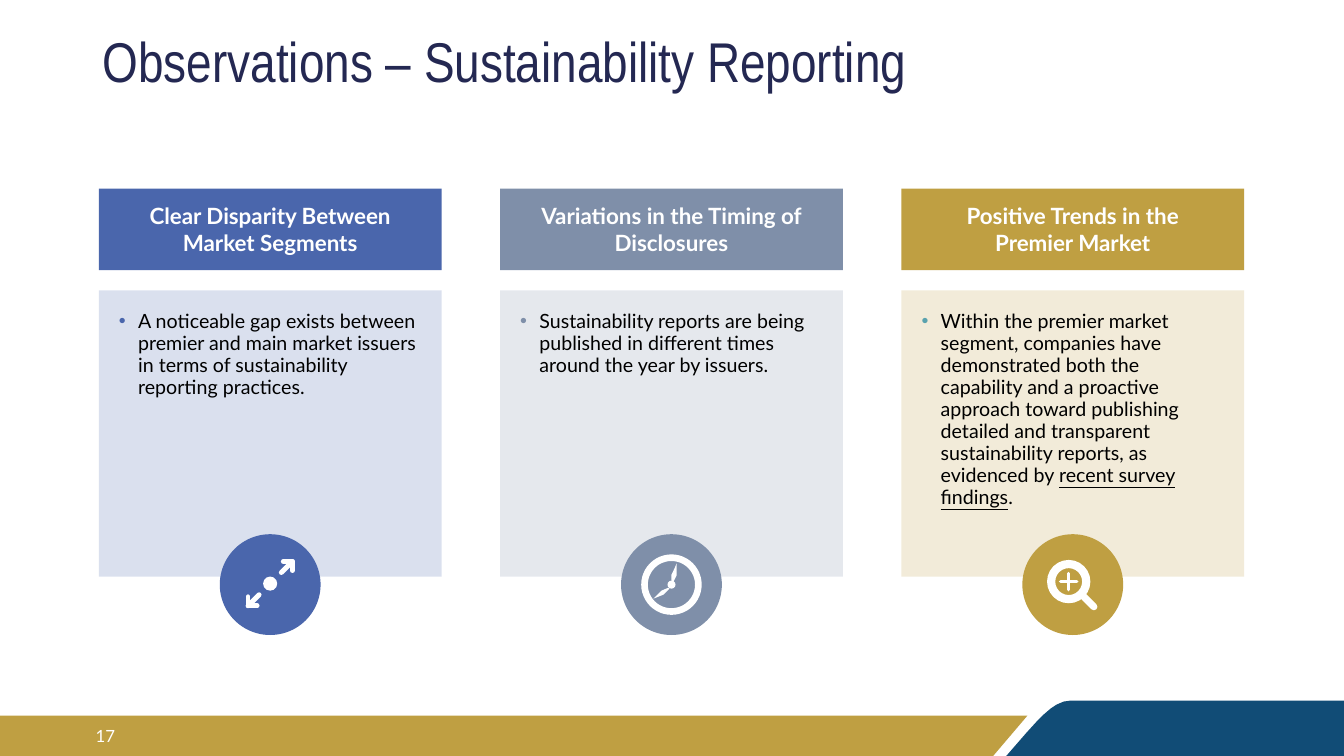
from collections import namedtuple

from lxml import etree
from pptx import Presentation
from pptx import util as u
from pptx.dml.color import RGBColor
from pptx.enum import shapes, text
from pptx.oxml.ns import qn

SLIDE_W, SLIDE_H = 13.33, 7.5
NAVY = RGBColor(0x24, 0x28, 0x52)
BLUE = RGBColor(0x4A, 0x66, 0xAC)
SLATE = RGBColor(0x7F, 0x8F, 0xA9)
GOLD = RGBColor(0xBF, 0x9F, 0x42)
TEAL = RGBColor(0x5A, 0xA2, 0xAE)
DEEP_BLUE = RGBColor(0x11, 0x4C, 0x76)
WHITE = RGBColor(0xFF, 0xFF, 0xFF)
BLACK = RGBColor(0, 0, 0)

PRESET = shapes.MSO_SHAPE
ALIGN = text.PP_ALIGN
ANCHOR = text.MSO_ANCHOR
Box = namedtuple("Box", "left top width height")


def inches(values):
    return [u.Inches(value) for value in values]


def centred(x, y, size):
    return Box(x - size / 2, y - size / 2, size, size)


def paint(shape, color, alpha=None):
    shape.shadow.inherit = False
    shape.line.fill.background()
    shape.fill.solid()
    shape.fill.fore_color.rgb = color
    if alpha:
        solid = shape.fill._xPr.find(qn("a:solidFill"))
        etree.SubElement(solid[0], qn("a:alpha"), val=str(alpha * 1000))
    return shape


def add_preset(slide, kind, box, color, alpha=None):
    return paint(slide.shapes.add_shape(kind, *inches(box)), color, alpha)


def trace(slide, points, close):
    start, *rest = [inches(point) for point in points]
    builder = slide.shapes.build_freeform(*start, scale=1.0)
    builder.add_line_segments(rest, close=close)
    return builder.convert_to_shape()


def add_outline(slide, points, color):
    return paint(trace(slide, points, True), color)


def add_stroke(slide, points, width):
    """Draw an open white line with round ends and corners."""
    stroke = trace(slide, points, False)
    stroke.shadow.inherit = False
    stroke.fill.background()
    stroke.line.color.rgb = WHITE
    stroke.line.width = u.Pt(width)
    line = stroke.line._ln
    line.set("cap", "rnd")
    etree.SubElement(line, qn("a:round"))


def set_frame(shape, anchor, margin_x=0.1, margin_y=0.05):
    frame = shape.text_frame
    settings = dict(word_wrap=True, vertical_anchor=anchor,
                    margin_left=u.Inches(margin_x), margin_right=u.Inches(margin_x),
                    margin_top=u.Inches(margin_y), margin_bottom=u.Inches(margin_y))
    for name, value in settings.items():
        setattr(frame, name, value)
    return frame.paragraphs[0]


def add_run(paragraph, wording, color, **font):
    run = paragraph.add_run()
    run.text = wording
    run.font.color.rgb = color
    for name, value in font.items():
        setattr(run.font, name, value)


def add_bullet(paragraph, color):
    props = paragraph._p.get_or_add_pPr()
    props.set("marL", str(u.Inches(0.19)))
    props.set("indent", str(-u.Inches(0.19)))
    bullet_color = etree.SubElement(props, qn("a:buClr"))
    etree.SubElement(bullet_color, qn("a:srgbClr"), val=str(color))
    etree.SubElement(props, qn("a:buFont"), typeface="Arial")
    etree.SubElement(props, qn("a:buChar"), char="•")


def draw_expand(slide, x, y):
    y -= 0.01
    add_preset(slide, PRESET.OVAL, centred(x, y, 0.14), WHITE)
    shaft = [(0.11, -0.11), (0.22, -0.22)]
    head = [(0.13, -0.22), (0.22, -0.22), (0.22, -0.13)]
    for sign in (1, -1):
        for part in (shaft, head):
            add_stroke(slide, [(x + sign * dx, y + sign * dy) for dx, dy in part], 3.5)


def draw_clock(slide, x, y):
    rim = add_preset(slide, PRESET.DONUT, centred(x, y, 0.6), WHITE)
    rim.adjustments[0] = 0.11
    add_preset(slide, PRESET.OVAL, centred(x, y, 0.08), WHITE)
    minute_hand = [(0.05, -0.21), (0.05, -0.09), (0.02, -0.03), (0, -0.04),
                   (0, -0.1), (0.03, -0.16)]
    hour_hand = [(-0.18, 0.14), (-0.1, 0.06), (-0.03, 0.03), (-0.02, 0.04),
                 (-0.08, 0.1), (-0.13, 0.12)]
    for hand in (minute_hand, hour_hand):
        add_outline(slide, [(x + dx, y + dy) for dx, dy in hand], WHITE)


def draw_magnifier(slide, x, y):
    lens_x, lens_y = x - 0.04, y - 0.03
    lens = add_preset(slide, PRESET.DONUT, centred(lens_x, lens_y, 0.43), WHITE)
    lens.adjustments[0] = 0.19
    arm = 0.08
    add_stroke(slide, [(lens_x - arm, lens_y), (lens_x + arm, lens_y)], 2.5)
    add_stroke(slide, [(lens_x, lens_y - arm), (lens_x, lens_y + arm)], 2.5)
    add_stroke(slide, [(x + 0.11, y + 0.12), (x + 0.21, y + 0.22)], 5)


OBSERVATIONS = [
    (BLUE, BLUE, draw_expand, "Clear Disparity Between Market Segments",
     [("A noticeable gap exists between premier and main market issuers in terms of "
       "sustainability reporting practices.", False)]),
    (SLATE, SLATE, draw_clock, "Variations in the Timing of Disclosures",
     [("Sustainability reports are being published in different times around the year "
       "by issuers.", False)]),
    (GOLD, TEAL, draw_magnifier, "Positive Trends in the Premier Market",
     [("Within the premier market segment, companies have demonstrated both the "
       "capability and a proactive approach toward publishing detailed and transparent "
       "sustainability reports, as evidenced by ", False),
      ("recent survey findings", True), (".", False)]),
]


def add_footer(slide, box):
    right, bottom = box.left + box.width, box.top + box.height
    band_top = bottom - 0.4
    add_outline(slide, [(10.62, box.top), (right, box.top), (right, bottom),
                        (9.98, bottom), (10.18, 7.27), (10.28, 7.16), (10.35, 7.09),
                        (10.42, 7.03), (10.48, 6.99), (10.55, 6.96)], DEEP_BLUE)
    add_outline(slide, [(box.left, band_top), (10.19, band_top), (9.85, bottom),
                        (box.left, bottom)], GOLD)
    number = slide.shapes.add_textbox(*inches((0.44, band_top, 0.8, 0.4)))
    paragraph = set_frame(number, ANCHOR.MIDDLE)
    paragraph.alignment = ALIGN.RIGHT
    add_run(paragraph, "17", WHITE, name="Lato", size=u.Pt(12))


def add_title(slide, box):
    title = slide.shapes.add_textbox(*inches(box))
    paragraph = set_frame(title, ANCHOR.MIDDLE)
    paragraph.line_spacing = 0.9
    add_run(paragraph, "Observations – Sustainability Reporting", NAVY,
            name="Arial Narrow", size=u.Pt(40))


def add_observation(slide, box, color, bullet, draw_icon, heading, body):
    """Stack a heading, a tinted panel and a round icon on the panel's lower edge."""
    heading_height, panel_offset = 0.81, 1.01
    panel_box = Box(box.left, box.top + panel_offset, box.width, box.height - panel_offset)
    panel = add_preset(slide, PRESET.RECTANGLE, panel_box, color, alpha=20)
    paragraph = set_frame(panel, ANCHOR.TOP, 0.2, 0.2)
    add_bullet(paragraph, bullet)
    for name, value in dict(alignment=ALIGN.LEFT, line_spacing=0.94,
                            space_after=u.Pt(8)).items():
        setattr(paragraph, name, value)
    for wording, underlined in body:
        add_run(paragraph, wording, BLACK, name="Lato", size=u.Pt(14),
                underline=underlined)

    banner = add_preset(slide, PRESET.RECTANGLE, box._replace(height=heading_height), color)
    paragraph = set_frame(banner, ANCHOR.MIDDLE, 0.27, 0.13)
    paragraph.alignment = ALIGN.CENTER
    add_run(paragraph, heading, WHITE, name="Lato", size=u.Pt(16), bold=True)

    x, y = box.left + box.width / 2, box.top + box.height + 0.08
    add_preset(slide, PRESET.OVAL, centred(x, y, 1), color)
    draw_icon(slide, x, y)


def add_columns(slide, box, gap=0.58):
    count = len(OBSERVATIONS)
    width = (box.width - gap * (count - 1)) / count
    for column, observation in enumerate(OBSERVATIONS):
        left = box.left + column * (width + gap)
        add_observation(slide, box._replace(left=left, width=width), *observation)


def main():
    deck = Presentation()
    deck.slide_width, deck.slide_height = inches((SLIDE_W, SLIDE_H))
    slide = deck.slides.add_slide(deck.slide_layouts[6])
    add_footer(slide, Box(0, SLIDE_H - 0.55, SLIDE_W, 0.55))
    add_title(slide, Box(0.92, 0.24, 11.5, 0.8))
    add_columns(slide, Box(0.98, 1.87, 11.36, 3.85))
    deck.save("out.pptx")


if __name__ == "__main__":
    main()
